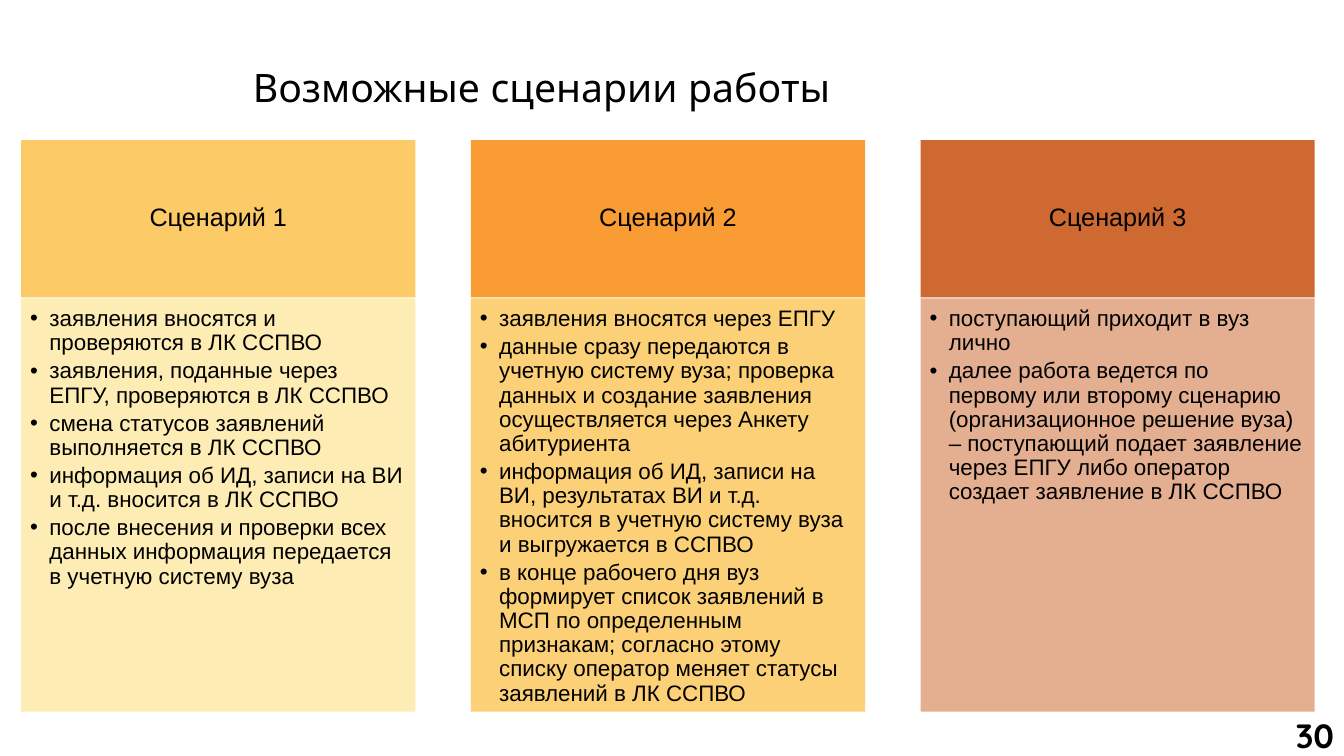
from lxml import etree
from pptx import Presentation
from pptx.dml.color import RGBColor
from pptx.enum.shapes import MSO_SHAPE
from pptx.enum.text import MSO_ANCHOR, PP_ALIGN
from pptx.oxml.ns import qn
from pptx.util import Inches, Pt

TITLE = "Возможные сценарии работы"
PAGE_NUMBER = "30"
# heading, heading fill, body fill, bullets
SCENARIOS = [
    ("Сценарий 1", "FCCB68", "FDECAD", [
        "заявления вносятся и проверяются в ЛК ССПВО",
        "заявления, поданные через ЕПГУ, проверяются в ЛК ССПВО",
        "смена статусов заявлений выполняется в ЛК ССПВО",
        "информация об ИД, записи на ВИ и т.д. вносится в ЛК ССПВО",
        "после внесения и проверки всех данных информация передается "
        "в учетную систему вуза",
    ]),
    ("Сценарий 2", "FA9C34", "FCCB68", [
        "заявления вносятся через ЕПГУ",
        "данные сразу передаются в учетную систему вуза; проверка данных "
        "и создание заявления осуществляется через Анкету абитуриента",
        "информация об ИД, записи на ВИ, результатах ВИ и т.д. вносится "
        "в учетную систему вуза и выгружается в ССПВО",
        "в конце рабочего дня вуз формирует список заявлений в МСП "
        "по определенным признакам; согласно этому списку оператор "
        "меняет статусы заявлений в ЛК ССПВО",
    ]),
    ("Сценарий 3", "CD6931", "E2A786", [
        "поступающий приходит в вуз лично",
        "далее работа ведется по первому или второму сценарию "
        "(организационное решение вуза) – поступающий подает заявление "
        "через ЕПГУ либо оператор создает заявление в ЛК ССПВО",
    ]),
]
LEFT, STEP, WIDTH = 0.21, 4.46, 3.91
HEAD_TOP, HEAD_HEIGHT = 1.39, 1.56
BODY_TOP, BODY_HEIGHT = 2.96, 4.1
BODY_OPACITY = 90
INDENT = Inches(0.19)


def color(hex_code):
    return RGBColor.from_string(hex_code)


def style(paragraph, size, font, bold=False):
    paragraph.font.size = Pt(size)
    paragraph.font.name = font
    paragraph.font.bold = bold
    paragraph.font.color.rgb = color("000000")


def add_label(page, text, place, size, align, anchor, bold=False):
    frame = page.shapes.add_textbox(*map(Inches, place)).text_frame
    frame.word_wrap = True
    frame.vertical_anchor = anchor
    para = frame.paragraphs[0]
    para.text = text
    para.alignment = align
    style(para, size, "Quicksand", bold)


def add_panel(page, place, fill, anchor, insets):
    """Add a borderless filled rectangle and return it."""
    panel = page.shapes.add_shape(MSO_SHAPE.RECTANGLE, *map(Inches, place))
    panel.shadow.inherit = False
    panel.fill.solid()
    panel.fill.fore_color.rgb = color(fill)
    panel.line.fill.background()
    frame = panel.text_frame
    frame.word_wrap = True
    frame.vertical_anchor = anchor
    (frame.margin_left, frame.margin_top,
     frame.margin_right, frame.margin_bottom) = map(Inches, insets)
    return panel


def set_opacity(shape, percent):
    fill = shape.fill._xPr.find(qn("a:solidFill"))
    etree.SubElement(fill[0], qn("a:alpha"), val=str(percent * 1000))


def add_bullet(para):
    properties = para._p.get_or_add_pPr()
    properties.set("marL", str(INDENT))
    properties.set("indent", str(-INDENT))
    etree.SubElement(properties, qn("a:buFont"), typeface="Arial")
    etree.SubElement(properties, qn("a:buChar"), char="•")


def add_scenario(page, left, heading, head_fill, body_fill, points):
    head = add_panel(page, (left, HEAD_TOP, WIDTH, HEAD_HEIGHT), head_fill,
                     MSO_ANCHOR.MIDDLE, (0.14, 0.08, 0.14, 0.08))
    para = head.text_frame.paragraphs[0]
    para.text = heading
    para.alignment = PP_ALIGN.CENTER
    para.line_spacing = 0.9
    style(para, 18, "Arial")

    body = add_panel(page, (left, BODY_TOP, WIDTH, BODY_HEIGHT), body_fill,
                     MSO_ANCHOR.TOP, (0.09, 0.09, 0.12, 0.14))
    set_opacity(body, BODY_OPACITY)
    frame = body.text_frame
    frame.text = "\n".join(points)
    for para in frame.paragraphs:
        add_bullet(para)
        para.alignment = PP_ALIGN.LEFT
        para.line_spacing = 0.9
        para.space_after = Pt(2.8)
        style(para, 16, "Arial")


def main():
    deck = Presentation()
    deck.slide_width, deck.slide_height = Inches(13.33), Inches(7.5)
    page = deck.slides.add_slide(deck.slide_layouts[6])
    add_label(page, TITLE, (2.41, 0.05, 8.11, 1.62), 28,
              PP_ALIGN.LEFT, MSO_ANCHOR.MIDDLE)
    for column, scenario in enumerate(SCENARIOS):
        add_scenario(page, LEFT + column * STEP, *scenario)
    add_label(page, PAGE_NUMBER, (12.28, 7.04, 1.05, 0.51), 24,
              PP_ALIGN.RIGHT, MSO_ANCHOR.TOP, bold=True)
    deck.save("out.pptx")


if __name__ == "__main__":
    main()
